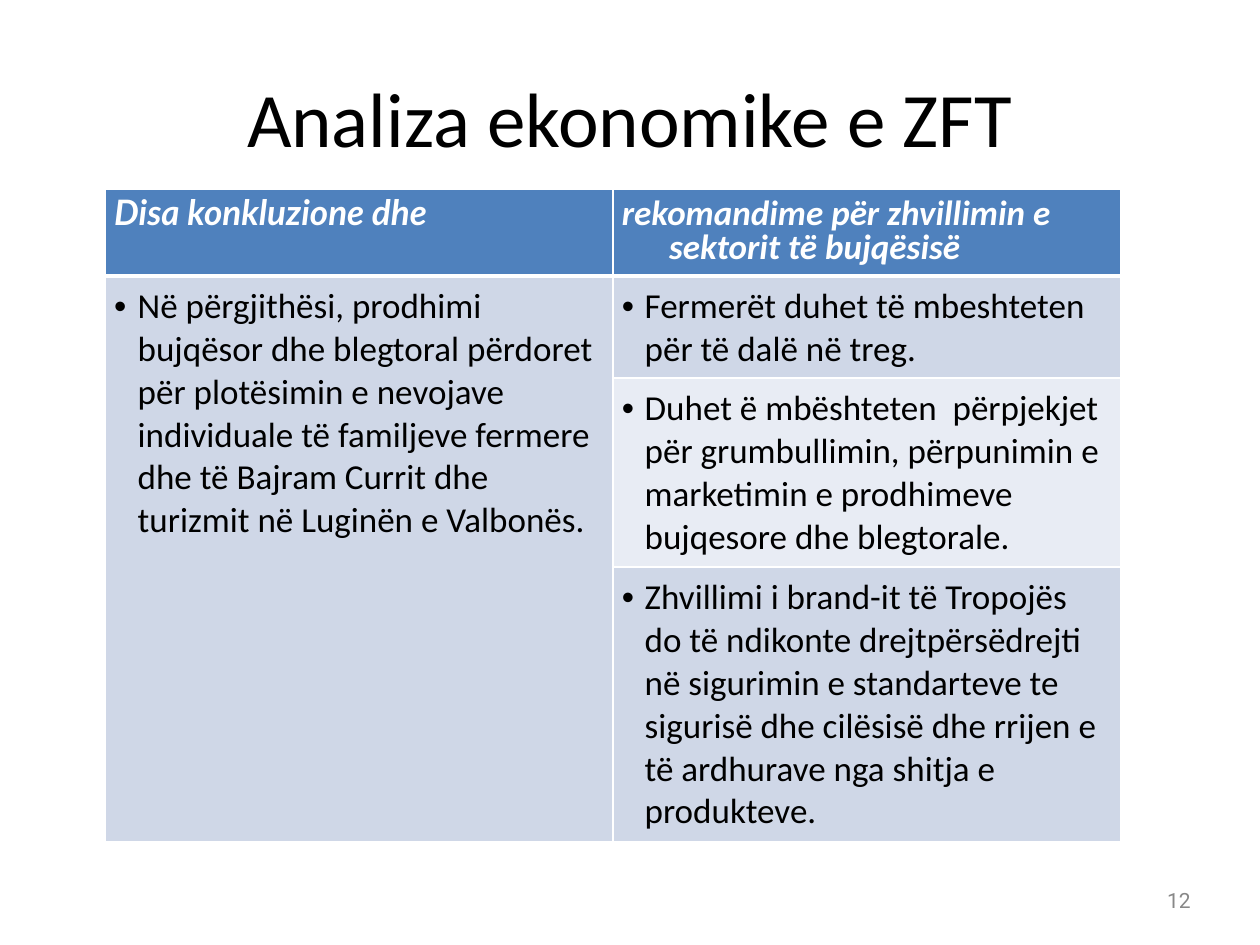
from dataclasses import dataclass

from lxml.etree import SubElement
from pptx import Presentation
from pptx.dml.color import RGBColor as RGB
from pptx.enum.text import MSO_ANCHOR as Anchor, PP_ALIGN as Align
from pptx.oxml.ns import qn
from pptx.util import Pt


@dataclass(frozen=True)
class Theme:
    black: str = "000000"
    white: str = "FFFFFF"
    grey: str = "888888"
    header: str = "4F81BD"
    band_dark: str = "CFD7E7"
    band_light: str = "E8ECF4"
    title_size: float = 44
    table_size: float = 20
    number_size: float = 12
    font: str = "Calibri"
    header_font: str = "Lato"
    number_font: str = "Roboto"


THEME = Theme()
HEADERS = [
    ("Disa konkluzione dhe", THEME.header_font, 0),
    ("rekomandime për zhvillimin e sektorit të bujqësisë", THEME.font, 4),
]
CONCLUSION = (
    "Në përgjithësi, prodhimi bujqësor dhe blegtoral përdoret për plotësimin "
    "e nevojave individuale të familjeve fermere dhe të Bajram Currit dhe "
    "turizmit në Luginën e Valbonës."
)
RECOMMENDATIONS = [
    "Fermerët duhet të mbeshteten për të dalë në treg.",
    "Duhet ë mbështeten  përpjekjet për grumbullimin, përpunimin e "
    "marketimin e prodhimeve bujqesore dhe blegtorale.",
    "Zhvillimi i brand-it të Tropojës do të ndikonte drejtpërsëdrejti në "
    "sigurimin e standarteve te sigurisë dhe cilësisë dhe rrijen e të "
    "ardhurave nga shitja e produkteve.",
]
COLUMN_WIDTH = 290.2
ROW_HEIGHTS = [49.7, 58.3, 108, 157]


def set_attrs(obj, values):
    for name, value in values.items():
        setattr(obj, name, value)


def add_run(p, text, size, font, color, **style):
    r = p.add_run()
    r.text = text
    set_attrs(r.font, {"size": Pt(size), "name": font, **style})
    r.font.color.rgb = RGB.from_string(color)


def add_text(slide, box, text, align, size, font, color):
    tf = slide.shapes.add_textbox(*map(Pt, box)).text_frame
    set_attrs(tf, {"word_wrap": True, "vertical_anchor": Anchor.MIDDLE})
    sides = ("left", "right", "top", "bottom")
    set_attrs(tf, {f"margin_{side}": Pt(3.6) for side in sides})
    p = tf.paragraphs[0]
    p.alignment = align
    add_run(p, text, size, font, color)


def hang(p, indent, bullet=None):
    """Give the paragraph a hanging indent and, if wanted, a bullet."""
    pPr = p._p.get_or_add_pPr()
    pPr.set("marL", str(Pt(indent)))
    pPr.set("indent", str(-Pt(indent)))
    if bullet:
        SubElement(pPr, qn("a:buFont"), typeface="Arial")
        SubElement(pPr, qn("a:buChar"), char=bullet)


def style_cell(cell, fill, bottom=1):
    sides = ("left", "right", "top", "bottom")
    set_attrs(cell, {f"margin_{side}": Pt(5.2) for side in sides})
    tcPr = cell._tc.get_or_add_tcPr()
    for side, width in {"L": 1, "R": 1, "T": 1, "B": bottom}.items():
        ln = SubElement(tcPr, qn(f"a:ln{side}"), w=str(Pt(width)))
        solid = SubElement(ln, qn("a:solidFill"))
        SubElement(solid, qn("a:srgbClr"), val=THEME.white)
    cell.fill.solid()
    cell.fill.fore_color.rgb = RGB.from_string(fill)


def fill_header(cell, text, font, space_before):
    p = cell.text_frame.paragraphs[0]
    set_attrs(p, {"line_spacing": 0.8, "space_before": Pt(space_before)})
    hang(p, 27)
    add_run(p, text, THEME.table_size, font, THEME.white, bold=True, italic=True)


def fill_bullet(cell, text, indent):
    p = cell.text_frame.paragraphs[0]
    p.space_before = Pt(4)
    hang(p, indent, "•")
    add_run(p, text, THEME.table_size, THEME.font, THEME.black, bold=False)


def add_findings_table(slide):
    size = (2 * COLUMN_WIDTH, sum(ROW_HEIGHTS))
    frame = slide.shapes.add_table(len(ROW_HEIGHTS), 2, *map(Pt, (60, 108, *size)))
    table = frame.table
    set_attrs(table, {"first_row": False, "horz_banding": False})
    for column in table.columns:
        column.width = Pt(COLUMN_WIDTH)
    for row, height in zip(table.rows, ROW_HEIGHTS):
        row.height = Pt(height)

    for col, header in enumerate(HEADERS):
        style_cell(table.cell(0, col), THEME.header, bottom=3)
        fill_header(table.cell(0, col), *header)
    for row, text in enumerate(RECOMMENDATIONS, 1):
        style_cell(table.cell(row, 0), THEME.band_dark)
        band = THEME.band_dark if row % 2 else THEME.band_light
        style_cell(table.cell(row, 1), band)
        fill_bullet(table.cell(row, 1), text, 13)
    table.cell(1, 0).merge(table.cell(len(RECOMMENDATIONS), 0))
    fill_bullet(table.cell(1, 0), CONCLUSION, 13.5)


def main():
    prs = Presentation()
    set_attrs(prs, {"slide_width": Pt(720), "slide_height": Pt(540)})
    slide = prs.slides.add_slide(prs.slide_layouts[6])
    add_text(slide, (36, 7.2, 648, 118.8), "Analiza ekonomike e ZFT",
             Align.CENTER, THEME.title_size, THEME.font, THEME.black)
    add_text(slide, (516, 504, 168, 21), "12",
             Align.RIGHT, THEME.number_size, THEME.number_font, THEME.grey)
    add_findings_table(slide)
    prs.save("out.pptx")


if __name__ == "__main__":
    main()
